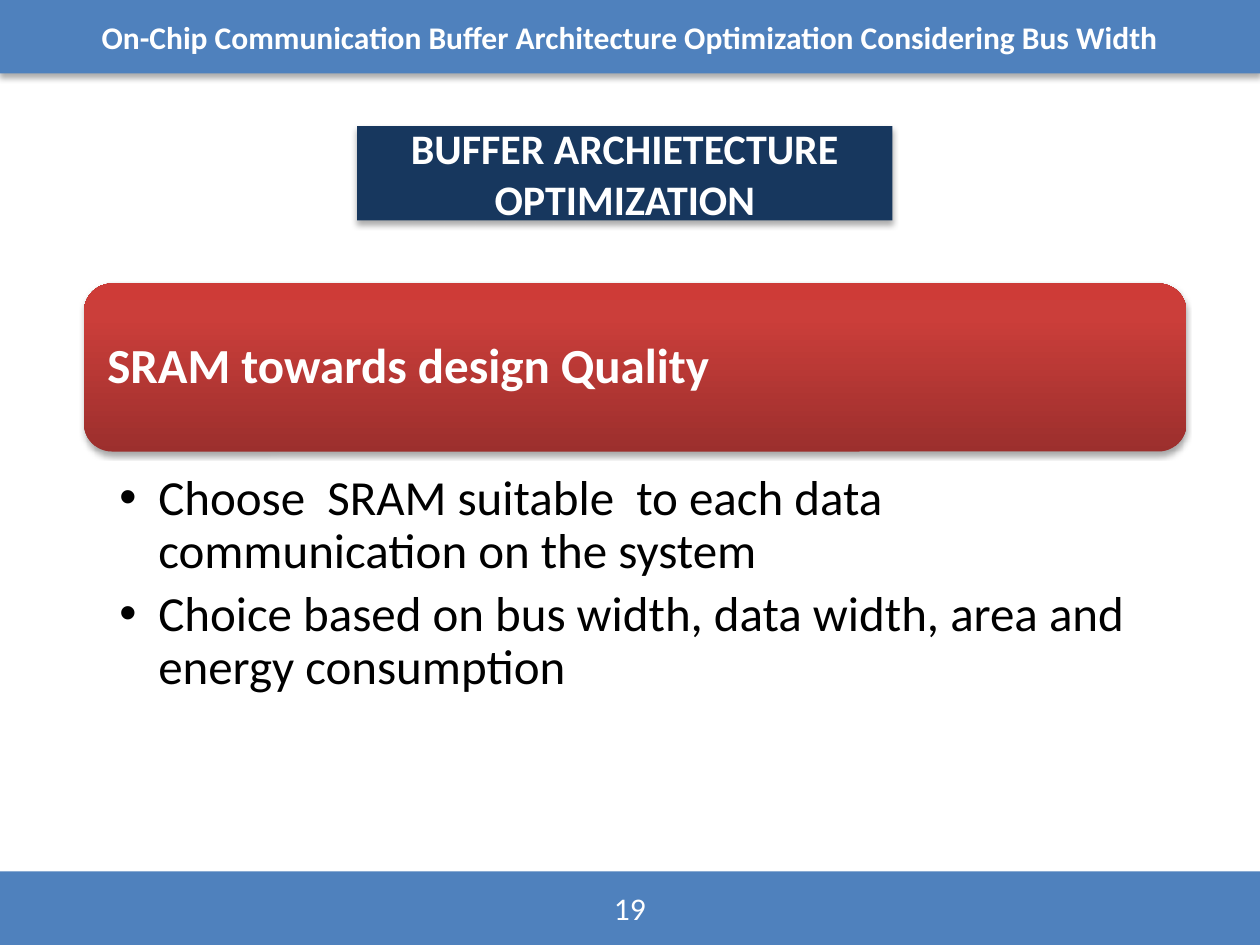
from lxml import etree
from pptx import Presentation
from pptx.dml.color import RGBColor
from pptx.enum.shapes import MSO_SHAPE
from pptx.enum.text import MSO_ANCHOR, PP_ALIGN
from pptx.oxml.ns import qn
from pptx.util import Inches, Pt

RECT, ROUNDED = MSO_SHAPE.RECTANGLE, MSO_SHAPE.ROUNDED_RECTANGLE
LEFT, CENTER = PP_ALIGN.LEFT, PP_ALIGN.CENTER
TOP, MIDDLE = MSO_ANCHOR.TOP, MSO_ANCHOR.MIDDLE
COLS, ROWS = 120, 90  # square grid units of 1/12 inch


def units(*values):
    return [Inches(v / 12) for v in values]


def color(hex_text):
    return RGBColor.from_string(hex_text)


def sub(parent, tag, **attrs):
    return etree.SubElement(parent, qn(tag), {k: str(v) for k, v in attrs.items()})


def write(tf, *lines, size=18, hex_color="FFFFFF", bold=False, align=CENTER,
          anchor=MIDDLE, insets=(0.1, 0.05, 0.1, 0.05), spacing=1.0, after=0, bullet=None):
    """Fill a text frame, one paragraph per line; insets run left, top, right, bottom."""
    tf.word_wrap, tf.vertical_anchor = True, anchor
    tf.margin_left, tf.margin_top, tf.margin_right, tf.margin_bottom = map(Inches, insets)
    for i, line in enumerate(lines):
        p = tf.add_paragraph() if i else tf.paragraphs[0]
        p.alignment, p.line_spacing, p.space_after = align, spacing, Pt(after)
        if bullet:
            p.level = 1
            pPr = p._p.get_or_add_pPr()
            indent = Inches(0.31)
            pPr.set("marL", str(indent))
            pPr.set("indent", str(-indent))
            sub(pPr, "a:buFont", typeface="Arial")
            sub(pPr, "a:buChar", char=bullet)
        r = p.add_run()
        r.text = line
        r.font.name, r.font.size, r.font.bold = "Calibri", Pt(size), bold
        r.font.color.rgb = color(hex_color)


class SlideBuilder:
    def __init__(self, s, accent):
        self.s, self.accent = s, accent

    def panel(self, box, *lines, fill=None, stops=None, shape=RECT,
              shadow=(3.5, 2.2, 32), **fmt):
        """Draw a shadowed shape; stops are (percent, colour) from bottom to top."""
        sp = self.s.shapes.add_shape(shape, *units(*box))
        sp.line.fill.background()
        if stops:
            sp.fill.gradient()
            sp.fill.gradient_angle = 90
            stop_list = sp._element.spPr.find(".//" + qn("a:gsLst"))
            for old in list(stop_list):
                stop_list.remove(old)
            for percent, hex_color in stops:
                stop = sub(stop_list, "a:gs", pos=percent * 1000)
                sub(stop, "a:srgbClr", val=hex_color)
        else:
            sp.fill.solid()
            sp.fill.fore_color.rgb = color(fill or self.accent)
        self.cast_shadow(sp, *shadow)
        write(sp.text_frame, *lines, **fmt)

    def cast_shadow(self, sp, blur, distance, opacity):
        sp.shadow.inherit = False
        effects = sp._element.spPr.find(qn("a:effectLst"))
        outer = sub(effects, "a:outerShdw", blurRad=Pt(blur), dist=Pt(distance),
                    dir=90 * 60000, rotWithShape=0)
        sub(sub(outer, "a:srgbClr", val="000000"), "a:alpha", val=opacity * 1000)

    def text(self, box, *lines, **fmt):
        write(self.s.shapes.add_textbox(*units(*box)).text_frame, *lines, **fmt)


def main():
    prs = Presentation()
    prs.slide_width, prs.slide_height = units(COLS, ROWS)
    s = prs.slides.add_slide(prs.slide_layouts[6])
    slide = SlideBuilder(s, accent="4F81BD")

    bar = 7
    margin, width = 8, 105
    slide.panel((0, ROWS - bar, COLS, bar), "19")
    slide.panel((0, 0, COLS, bar),
                "On-Chip Communication Buffer Architecture Optimization Considering Bus Width",
                bold=True)
    slide.panel((margin, 27, width, 16), "SRAM towards design Quality", shape=ROUNDED,
                stops=((0, "9C2F2D"), (80, "CB3E3A"), (100, "CE3B37")),
                shadow=(3.1, 1.8, 35), size=28, bold=True, align=LEFT,
                insets=(0.12,) * 4, spacing=0.9)
    slide.text((margin, 44.6, width, 23),
               "Choose  SRAM suitable  to each data communication on the system",
               "Choice based on bus width, data width, area and energy consumption",
               size=28, hex_color="000000", align=LEFT, anchor=TOP,
               insets=(0.28, 0.04, 0.22, 0.04), spacing=0.9, after=5.6, bullet="•")
    slide.panel((34, 12, 51, 9), "BUFFER ARCHIETECTURE OPTIMIZATION",
                fill="17375E", size=24, bold=True)

    prs.save("out.pptx")


if __name__ == "__main__":
    main()
